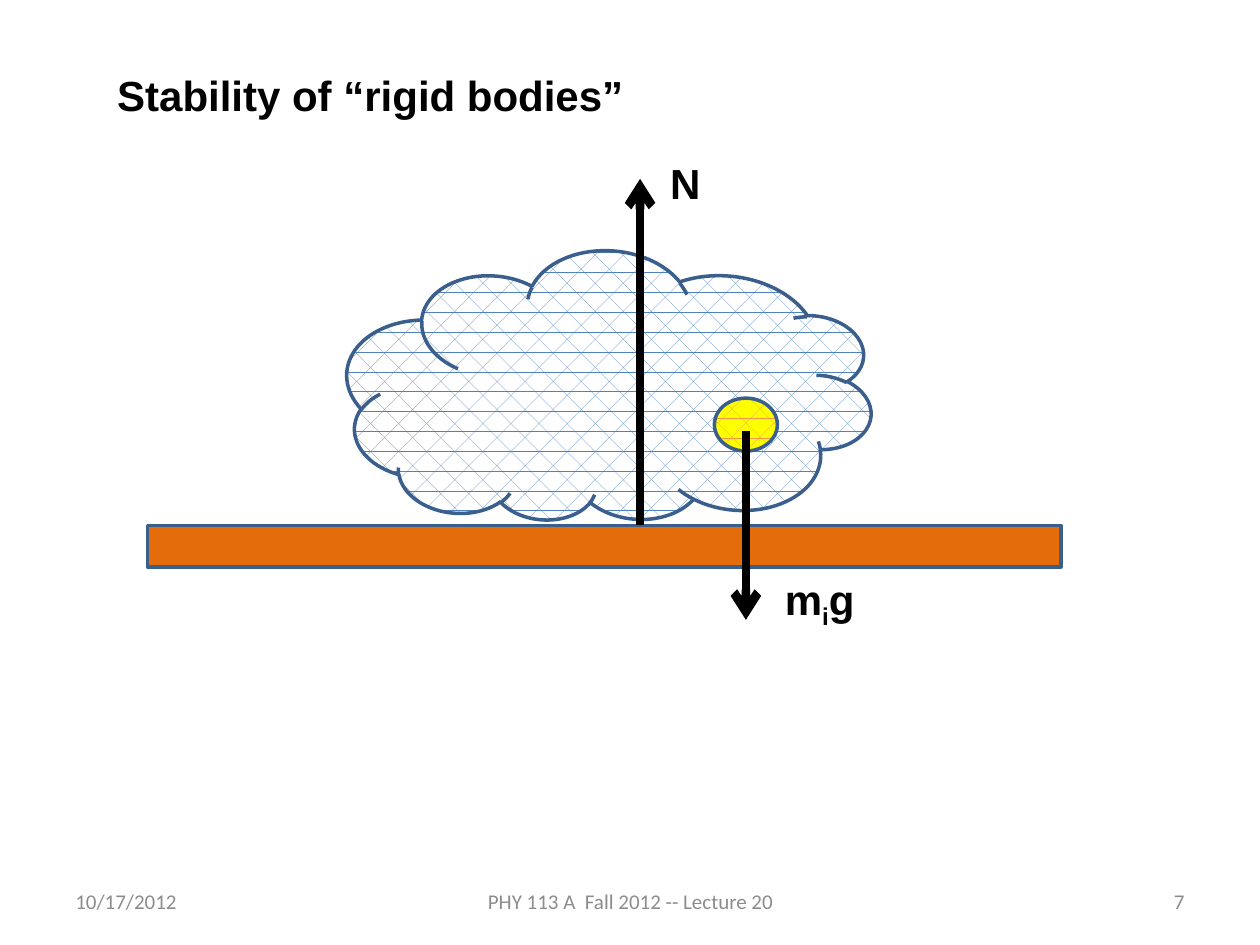
"""Build a slide on the stability of rigid bodies, with its force diagram."""
from lxml import etree
from pptx import Presentation
from pptx import util as u
from pptx.dml.color import RGBColor
from pptx.enum import dml, shapes, text
from pptx.oxml.ns import qn

THEME = {
    "ink": "000000", "gray": "8C8C8C", "edge": "3A5F8C", "table": "E46C0A",
    "blue": "4F81BD", "white": "FFFFFF", "orange": "F79646", "yellow": "FFFF00",
    "head": ("Arial", 24, True, "ink"), "foot": ("Calibri", 12, False, "gray"),
    "rim": 2, "force": 5,
}
KIND, SIDE, ANCHOR = shapes.MSO_SHAPE, text.PP_ALIGN, text.MSO_ANCHOR

TITLE = ("Stability of “rigid bodies”", (0.83, 0.5, 8.83, 0.5))
FEET = [
    ("10/17/2012", (0.5, 6.95, 2.33, 0.4), SIDE.LEFT),
    ("PHY 113 A  Fall 2012 -- Lecture 20", (3.42, 6.95, 3.17, 0.4), SIDE.CENTER),
    ("7", (7.17, 6.95, 2.33, 0.4), SIDE.RIGHT),
]
BODIES = [
    (KIND.RECTANGLE, (1.17, 4.17, 7.25, 0.33), 0, ("table",)),
    (KIND.CLOUD, (2.75, 2, 4.17, 2.17), 184.3, ("blue", "white")),
    (KIND.OVAL, (5.67, 3.16, 0.5, 0.42), 0, ("orange", "yellow")),
]
FORCES = [
    (5.08, 4.17, 1.42, ["N"], (5.22, 1.2, 0.58, 0.5)),
    (5.92, 3.42, 4.92, ["m", "i", "g"], (6.13, 4.5, 1.25, 0.5)),
]


def color(name):
    """Return a theme colour."""
    return RGBColor.from_string(THEME[name])


def inches(box):
    """Turn numbers into lengths."""
    return [u.Inches(n) for n in box]


def write(shape, parts, style, side=SIDE.LEFT, anchor=ANCHOR.TOP):
    """Write one paragraph; a second part is set as a subscript."""
    frame = shape.text_frame
    frame.word_wrap = True
    frame.auto_size = text.MSO_AUTO_SIZE.NONE
    frame.vertical_anchor = anchor
    para = frame.paragraphs[0]
    para.alignment = side
    face, size, bold, ink = THEME[style]
    for i, part in enumerate(parts):
        run = para.add_run()
        run.text = part
        font = run.font
        font.name, font.size, font.bold = face, u.Pt(size), bold
        font.color.rgb = color(ink)
        if i == 1:
            run._r.get_or_add_rPr().set("baseline", "-25000")


def draw(slide, kind, box, turn, paint):
    """Draw a body with a plain or patterned fill."""
    body = slide.shapes.add_shape(kind, *inches(box))
    body.shadow.inherit = False
    body.rotation = turn
    if len(paint) == 1:
        body.fill.solid()
        body.fill.fore_color.rgb = color(paint[0])
    else:
        body.fill.patterned()
        body.fill.pattern = dml.MSO_PATTERN.DIVOT
        body.fill.fore_color.rgb, body.fill.back_color.rgb = map(color, paint)
    body.line.color.rgb = color("edge")
    body.line.width = u.Pt(THEME["rim"])


def push(slide, x, start, end):
    """Draw a vertical force arrow."""
    arrow = slide.shapes.add_connector(
        shapes.MSO_CONNECTOR.STRAIGHT, *inches((x, start, x, end)))
    arrow.line.color.rgb = color("ink")
    arrow.line.width = u.Pt(THEME["force"])
    etree.SubElement(arrow.line._get_or_add_ln(), qn("a:tailEnd"), type="arrow")
    etree.SubElement(arrow._element.spPr, qn("a:effectLst"))


def main():
    """Assemble and save the slide."""
    deck = Presentation()
    deck.slide_width, deck.slide_height = inches((10, 7.5))
    slide = deck.slides.add_slide(deck.slide_layouts[5])
    title = slide.shapes.title
    words, box = TITLE
    title.left, title.top, title.width, title.height = inches(box)
    write(title, [words], "head")
    for words, box, side in FEET:
        foot = slide.shapes.add_textbox(*inches(box))
        write(foot, [words], "foot", side, ANCHOR.MIDDLE)
    for body in BODIES:
        draw(slide, *body)
    for x, start, end, parts, box in FORCES:
        push(slide, x, start, end)
        write(slide.shapes.add_textbox(*inches(box)), parts, "head")
    deck.save("out.pptx")


if __name__ == "__main__":
    main()
